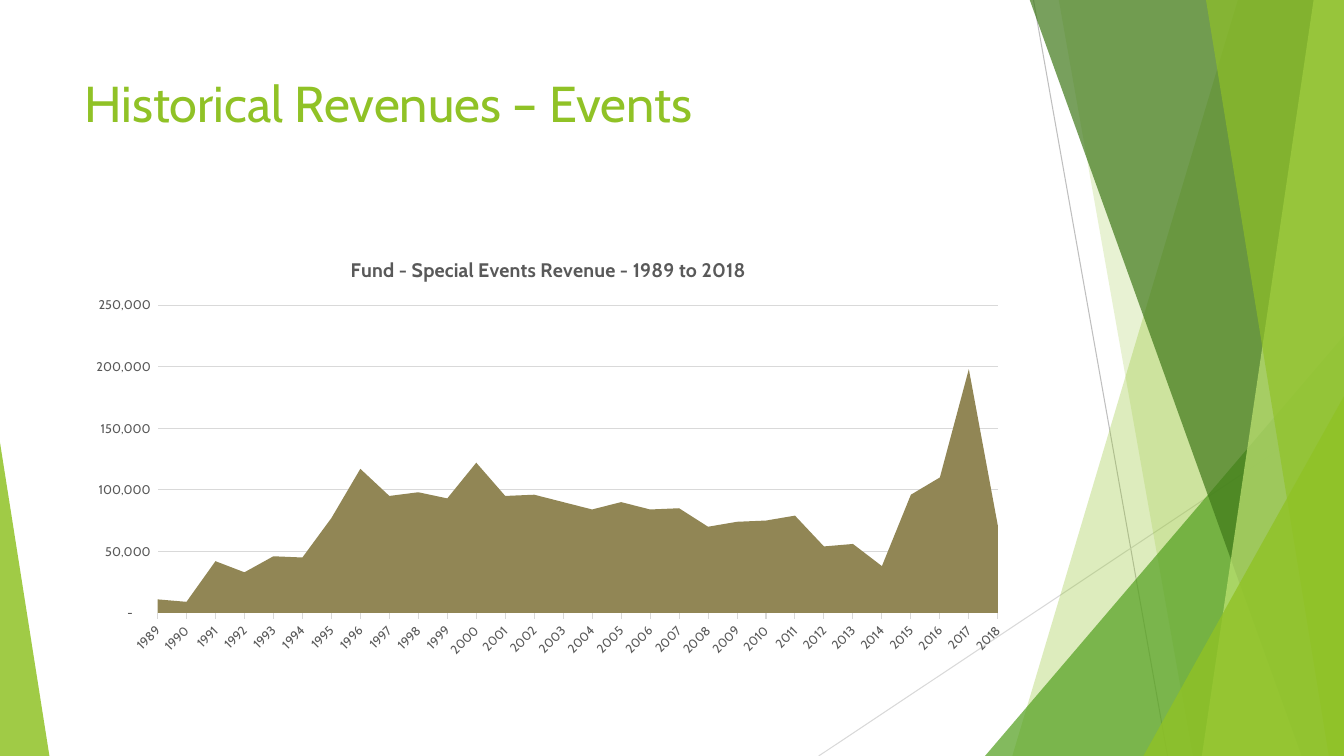
from dataclasses import dataclass

from lxml import etree
from pptx import Presentation
from pptx import util as u
from pptx.chart.data import CategoryChartData
from pptx.dml.color import RGBColor
from pptx.enum import chart as charts, shapes, text
from pptx.oxml.ns import qn


@dataclass(frozen=True)
class Theme:
    """Colours, font and type sizes of the slide."""
    font: str = "Cabin"
    lime: str = "90C226"
    green: str = "54A021"
    forest: str = "3F7819"
    pale: str = "C0E474"
    olive: str = "918655"
    ink: str = "595959"
    line: str = "BFBFBF"
    grid: str = "D9D9D9"
    title: int = 36
    chart_title: int = 14
    label: int = 9
    hairline: float = 0.75


THEME = Theme()
WIDTH, HEIGHT = 13.33, 7.5
FIRST_YEAR = 1989
REVENUES = [
    11000, 9000, 42000, 33000, 46000, 45000, 77000, 117000, 95000, 98000,
    93000, 122000, 95000, 96000, 90000, 84000, 90000, 84000, 85000, 70000,
    74000, 75000, 79000, 54000, 56000, 38000, 96000, 110000, 198000, 71000,
]
NUMBER_FORMAT = r'_-* #,##0_-;\-* #,##0_-;_-* "-"??_-;_-@_'


def style_font(font, size, color, bold=False):
    """Apply the theme font with a size and colour."""
    font.name, font.size, font.bold = THEME.font, u.Pt(size), bold
    font.color.rgb = RGBColor.from_string(color)


def style_line(line, color):
    """Make a line a hairline of the given colour."""
    line.color.rgb = RGBColor.from_string(color)
    line.width = u.Pt(THEME.hairline)


def paint(shape, color, opacity):
    """Fill a shape with a translucent colour and no outline."""
    shape.shadow.inherit = False
    shape.line.fill.background()
    shape.fill.solid()
    shape.fill.fore_color.rgb = RGBColor.from_string(color)
    value = shape.fill._xPr.find(qn("a:solidFill"))[0]
    etree.SubElement(value, qn("a:alpha"), val=str(opacity * 1000))


def add_hairline(slide, start, end, color):
    """Draw a thin straight line without a shadow."""
    points = [u.Inches(value) for value in (*start, *end)]
    connector = slide.shapes.add_connector(shapes.MSO_CONNECTOR.STRAIGHT, *points)
    style_line(connector.line, color)
    etree.SubElement(connector._element.spPr, qn("a:effectLst"))


def add_band(slide, box, top, bottom, color, opacity):
    """Draw a slanted band from a left edge to the right side of the box."""
    left, upper, width, height = box
    right, lower = left + width, upper + height
    builder = slide.shapes.build_freeform(
        u.Inches(left + top), u.Inches(upper), scale=1.0)
    corners = [(right, upper), (right, lower), (left + bottom, lower)]
    builder.add_line_segments([(u.Inches(x), u.Inches(y)) for x, y in corners])
    paint(builder.convert_to_shape(), color, opacity)


def add_triangle(slide, box, apex, color, opacity):
    """Draw a triangle with its apex at a fraction of the box width."""
    shape = slide.shapes.add_shape(
        shapes.MSO_SHAPE.ISOSCELES_TRIANGLE, *map(u.Inches, box))
    shape.adjustments[0] = apex
    paint(shape, color, opacity)


def add_facets(slide, box):
    """Layer the green facets along the sides of the slide."""
    left, top, width, height = box
    right, bottom = left + width, top + height
    panel = (right - 3.29, top - 0.01, 3.29, height + 0.01)
    add_hairline(slide, (right - 3.08, top), (right - 1.75, bottom), THEME.line)
    add_hairline(slide, (right, top + 4.03), (right - 5.21, bottom), THEME.grid)
    add_band(slide, panel, 2.24, 0, THEME.lime, 30)
    add_band(slide, panel, 0.46, 1.79, THEME.lime, 20)
    add_triangle(slide, (right - 3.56, bottom - 4.17, 3.56, 4.17), 1, THEME.green, 72)
    add_band(slide, panel, 0.17, 2.87, THEME.forest, 70)
    add_band(slide, panel, 2.99, 1.88, THEME.pale, 70)
    add_band(slide, panel, 1.92, 3.14, THEME.lime, 65)
    add_triangle(slide, (right - 1.99, bottom - 3.57, 1.99, 3.57), 1, THEME.lime, 80)
    add_triangle(slide, (left, bottom - 3.11, 0.49, 3.11), 0, THEME.lime, 85)


def add_title(slide, box):
    """Write the slide title at the top of its box."""
    frame = slide.shapes.add_textbox(*map(u.Inches, box)).text_frame
    frame.word_wrap = True
    frame.vertical_anchor = text.MSO_ANCHOR.TOP
    run = frame.paragraphs[0].add_run()
    run.text = "Historical Revenues – Events"
    style_font(run.font, THEME.title, THEME.lime)


def style_axes(chart):
    """Format the year axis and the revenue axis."""
    years, revenue = chart.category_axis, chart.value_axis
    for axis in (years, revenue):
        style_font(axis.tick_labels.font, THEME.label, THEME.ink)
    years.major_tick_mark = charts.XL_TICK_MARK.OUTSIDE
    years.has_major_gridlines = False
    style_line(years.format.line, THEME.grid)
    years._element.find(qn("c:txPr")).find(qn("a:bodyPr")).set("rot", "-2700000")
    revenue.minimum_scale, revenue.maximum_scale = 0, 250000
    revenue.major_unit = 50000
    revenue.major_tick_mark = charts.XL_TICK_MARK.NONE
    revenue.has_major_gridlines = True
    style_line(revenue.major_gridlines.format.line, THEME.grid)
    revenue.format.line.fill.background()
    revenue.tick_labels.number_format = NUMBER_FORMAT
    revenue.tick_labels.number_format_is_linked = False
    revenue._element.find(qn("c:crossBetween")).set("val", "midCat")


def add_revenue_chart(slide, box):
    """Plot yearly event revenue as an area chart."""
    data = CategoryChartData()
    data.categories = [str(FIRST_YEAR + i) for i in range(len(REVENUES))]
    data.add_series("Series 1", REVENUES)
    chart = slide.shapes.add_chart(
        charts.XL_CHART_TYPE.AREA, *map(u.Inches, box), data).chart
    style_font(chart.font, THEME.label, THEME.ink)
    chart.has_legend = False
    chart.has_title = True
    run = chart.chart_title.text_frame.paragraphs[0].add_run()
    run.text = "Fund - Special Events Revenue - 1989 to 2018"
    style_font(run.font, THEME.chart_title, THEME.ink, bold=True)
    plot = chart.plots[0]
    plot.vary_by_categories = False
    fill = plot.series[0].format.fill
    fill.solid()
    fill.fore_color.rgb = RGBColor.from_string(THEME.olive)
    style_axes(chart)


def main():
    """Build and save the presentation."""
    presentation = Presentation()
    presentation.slide_width = u.Inches(WIDTH)
    presentation.slide_height = u.Inches(HEIGHT)
    slide = presentation.slides.add_slide(presentation.slide_layouts[6])
    add_facets(slide, (0, 0, WIDTH, HEIGHT))
    add_title(slide, (0.74, 0.67, 9.4, 1.44))
    add_revenue_chart(slide, (0.74, 2.37, 9.4, 4.24))
    presentation.save("out.pptx")


if __name__ == "__main__":
    main()
